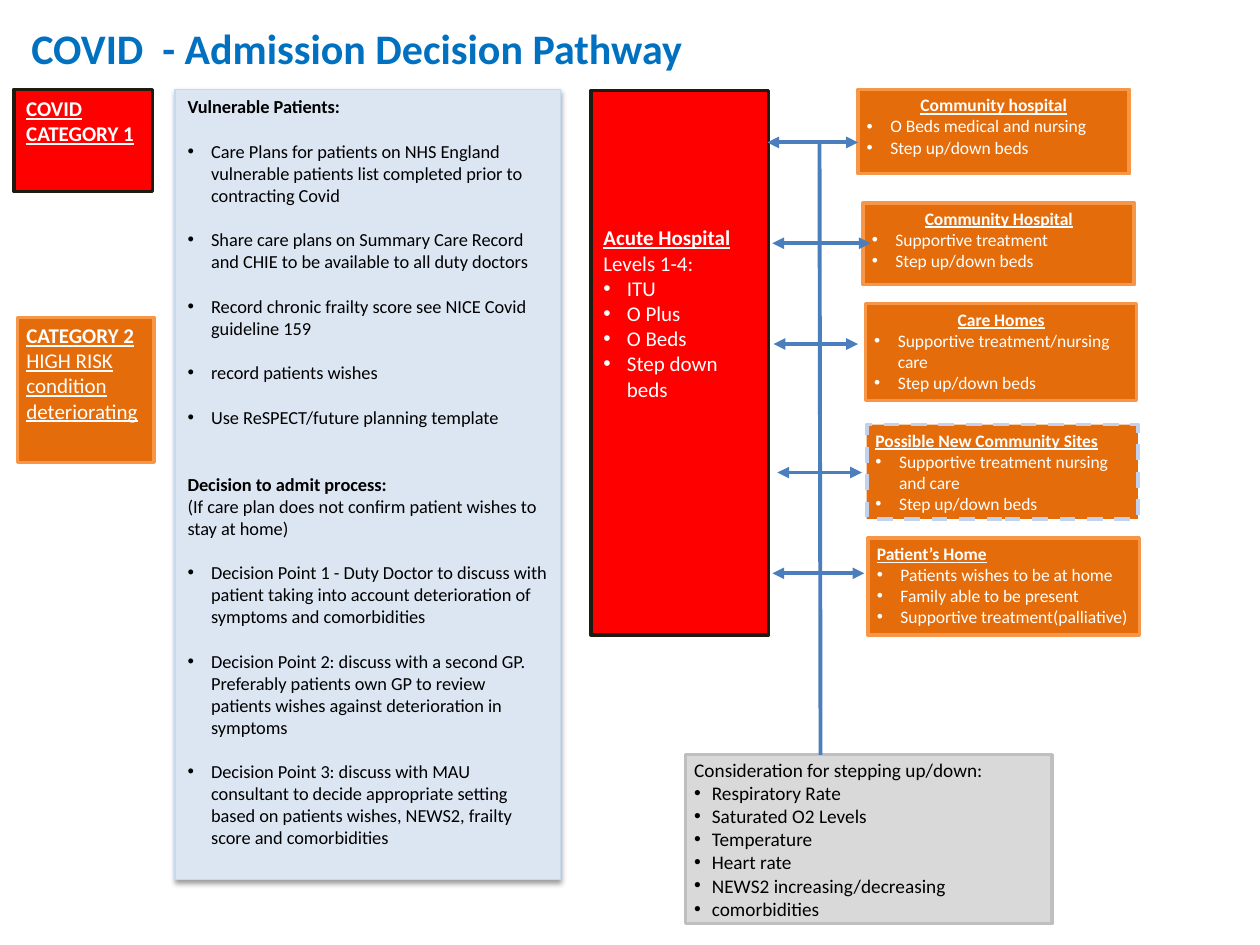
import dataclasses

import lxml.etree
import pptx
import pptx.dml.color
import pptx.enum.dml
import pptx.enum.shapes
import pptx.enum.text
import pptx.oxml
import pptx.oxml.ns
import pptx.util

Pt = pptx.util.Pt
qn = pptx.oxml.ns.qn
ALIGN = pptx.enum.text.PP_ALIGN
ANCHOR = pptx.enum.text.MSO_ANCHOR

FONT = "Calibri"
COLORS = {
    "title": "0070C0", "red": "FF0000", "dark": "1E1C11",
    "orange": "E46C0A", "orange_edge": "F79646", "dash_edge": "C2D1ED",
    "gray": "D9D9D9", "gray_edge": "BFBFBF",
    "blue": "DCE6F2", "blue_edge": "C6D9F1", "arrow": "4B7EBC",
    "white": "FFFFFF", "black": "000000",
}
NORMAL_INSETS = (7.2, 3.6)
TIGHT_INSETS = (5, 2.9)
GUIDANCE_GAP = 12.8  # one line of guidance text


@dataclasses.dataclass
class Line:
    """A paragraph made of (text, bold) runs."""
    runs: list
    underline: bool = False
    indent: float = 0
    align: object = ALIGN.LEFT
    before: float = 0


def heading(text, align=ALIGN.LEFT, before=0):
    return Line([(text, True)], underline=True, align=align, before=before)


def bullet(text, indent=13.5, before=0):
    return Line([(text, False)], indent=indent, before=before)


def rgb(name):
    return pptx.dml.color.RGBColor.from_string(COLORS[name])


def write_lines(frame, lines, size, color):
    for index, line in enumerate(lines):
        paragraph = frame.paragraphs[0] if index == 0 else frame.add_paragraph()
        if line.indent:
            properties = paragraph._p.get_or_add_pPr()
            properties.set("marL", str(Pt(line.indent)))
            properties.set("indent", str(-Pt(line.indent)))
            lxml.etree.SubElement(properties, qn("a:buFont")).set("typeface", "Arial")
            lxml.etree.SubElement(properties, qn("a:buChar")).set("char", "•")
        paragraph.alignment = line.align
        if line.before:
            paragraph.space_before = Pt(line.before)
        for text, bold in line.runs:
            run = paragraph.add_run()
            run.text = text
            run.font.name = FONT
            run.font.size = Pt(size)
            run.font.bold = bold
            run.font.underline = line.underline
            run.font.color.rgb = rgb(color)


def add_panel(slide, box, lines, size, fill, edge, color="white",
              insets=TIGHT_INSETS, edge_width=2, anchor=ANCHOR.TOP):
    shape = slide.shapes.add_shape(
        pptx.enum.shapes.MSO_SHAPE.RECTANGLE, *map(Pt, box))
    shape.shadow.inherit = False
    shape.fill.solid()
    shape.fill.fore_color.rgb = rgb(fill)
    shape.line.color.rgb = rgb(edge)
    shape.line.width = Pt(edge_width)
    frame = shape.text_frame
    frame.word_wrap = True
    frame.vertical_anchor = anchor
    frame.margin_left = frame.margin_right = Pt(insets[0])
    frame.margin_top = frame.margin_bottom = Pt(insets[1])
    write_lines(frame, lines, size, color)
    return shape


def add_shadow(shape):
    effects = shape._element.spPr.find(qn("a:effectLst"))
    effects.append(pptx.oxml.parse_xml(
        f'<a:outerShdw {pptx.oxml.ns.nsdecls("a")} blurRad="{Pt(3.1)}" '
        f'dist="{Pt(1.6)}" dir="5400000" rotWithShape="0">'
        f'<a:srgbClr val="{COLORS["black"]}"><a:alpha val="38000"/></a:srgbClr>'
        '</a:outerShdw>'))


def add_line(slide, start, end, arrow=True):
    connector = slide.shapes.add_connector(
        pptx.enum.shapes.MSO_CONNECTOR.STRAIGHT, *map(Pt, (*start, *end)))
    connector.line.color.rgb = rgb("arrow")
    connector.line.width = Pt(2.25)
    if arrow:
        outline = connector.line._get_or_add_ln()
        lxml.etree.SubElement(outline, qn("a:tailEnd")).set("type", "triangle")
    lxml.etree.SubElement(connector._element.spPr, qn("a:effectLst"))


def draw_title(slide, box):
    frame = slide.shapes.add_textbox(*map(Pt, box)).text_frame
    frame.word_wrap = False
    write_lines(frame, [Line([("COVID  - Admission Decision Pathway", True)])], 24, "title")


def draw_categories(slide, box):
    left, top, width, height = box
    add_panel(slide, (left, top, width - 0.8, 58.3), [heading("COVID CATEGORY 1")],
              12, "red", "dark", insets=NORMAL_INSETS)
    high_risk = Line([("CATEGORY 2 ", True),
                      ("HIGH RISK condition deteriorating", False)], underline=True)
    add_panel(slide, (left + 2.2, top + height - 82.8, width - 2.2, 82.8), [high_risk],
              12, "orange", "orange_edge")


def draw_guidance(slide, box):
    care_plans = [
        "Care Plans for patients on NHS England vulnerable patients list "
        "completed prior to contracting Covid",
        "Share care plans on Summary Care Record and CHIE to be available to all duty doctors",
        "Record chronic frailty score see NICE Covid guideline 159",
        "record patients wishes",
        "Use ReSPECT/future planning template",
    ]
    decisions = [
        "Decision Point 1 - Duty Doctor to discuss with patient taking into account "
        "deterioration of symptoms and comorbidities",
        "Decision Point 2: discuss with a second GP. Preferably patients own GP to review "
        "patients wishes against deterioration in symptoms",
        "Decision Point 3: discuss with MAU consultant to decide appropriate setting based "
        "on patients wishes, NEWS2, frailty score and comorbidities",
    ]
    lines = [
        Line([("Vulnerable Patients:", True)]),
        *(bullet(text, before=GUIDANCE_GAP) for text in care_plans),
        Line([("Decision to admit process:", True)], before=2 * GUIDANCE_GAP),
        Line([("(If care plan does not confirm patient wishes to stay at home)", False)]),
        *(bullet(text, before=GUIDANCE_GAP) for text in decisions),
    ]
    panel = add_panel(slide, box, lines, 10.5, "blue", "blue_edge", "black",
                      NORMAL_INSETS, edge_width=0.75)
    add_shadow(panel)


def draw_acute_hospital(slide, box):
    lines = [heading("Acute Hospital"), Line([("Levels 1-4:", False)]),
             *map(bullet, ("ITU", "O Plus", "O Beds", "Step down beds"))]
    panel = add_panel(slide, box, lines, 12, "red", "dark", insets=NORMAL_INSETS)
    panel.text_frame.margin_top = Pt(76.8)


def draw_care_settings(slide, box):
    left, top, width, _ = box
    beds = "Step up/down beds"
    # x offset, y offset, height, title, alignment, bullets
    settings = [
        (0, 0, 48.2, "Community hospital", ALIGN.CENTER,
         ["O Beds medical and nursing", beds]),
        (2.9, 64.8, 46.8, "Community Hospital", ALIGN.CENTER,
         ["Supportive treatment", beds]),
        (4.3, 122.4, 55.4, "Care Homes", ALIGN.CENTER,
         ["Supportive treatment/nursing care", beds]),
        (5, 191.5, 54, "Possible New Community Sites", ALIGN.LEFT,
         ["Supportive treatment nursing and care", beds]),
        (5.8, 256.3, 55.4, "Patient’s Home", ALIGN.LEFT,
         ["Patients wishes to be at home", "Family able to be present",
          "Supportive treatment(palliative)"]),
    ]
    for x, y, height, title, align, items in settings:
        card = add_panel(slide, (left + x, top + y, width, height),
                         [heading(title, align), *map(bullet, items)],
                         10, "orange", "orange_edge")
        if title.startswith("Possible"):
            card.line.color.rgb = rgb("dash_edge")
            card.line.width = Pt(2.25)
            card.line.dash_style = pptx.enum.dml.MSO_LINE.DASH


def draw_considerations(slide, box):
    items = ("Respiratory Rate", "Saturated O2 Levels", "Temperature", "Heart rate",
             "NEWS2 increasing/decreasing", "comorbidities")
    lines = [Line([("Consideration for stepping up/down:", False)]),
             *(bullet(text, indent=10.1) for text in items)]
    add_panel(slide, box, lines, 11, "gray", "gray_edge", "black", anchor=ANCHOR.MIDDLE)


def draw_transfers(slide, box):
    """Trunk line with arrows out to the hospital and to each care setting."""
    left, top, _, height = box
    trunk = left + 29.8
    add_line(slide, (trunk + 0.6, top + height), (trunk, top), arrow=False)
    # y offset, left tip, right tip
    for y, start, end in [(0, 0, 51.8), (57.6, 2.9, 59), (115.2, 3.6, 51.8),
                          (188.6, 5.8, 54), (246.2, 2.9, 55.4)]:
        for tip in (start, end):
            add_line(slide, (trunk, top + y), (left + tip, top + y))


def main():
    presentation = pptx.Presentation()
    presentation.slide_width, presentation.slide_height = Pt(720), Pt(540)
    slide = presentation.slides.add_slide(presentation.slide_layouts[6])
    draw_categories(slide, (7.9, 51.1, 80, 213.1))
    draw_acute_hospital(slide, (337.7, 51.8, 101.5, 311))
    draw_considerations(slide, (391.7, 431.3, 209.5, 96.5))
    draw_care_settings(slide, (490.3, 51.1, 155, 311.8))
    draw_transfers(slide, (438.5, 81.4, 59, 349.9))
    draw_guidance(slide, (100.1, 51.1, 220.3, 451.4))
    draw_title(slide, (10.8, 9.4, 390.2, 65.5))
    presentation.save("out.pptx")


if __name__ == "__main__":
    main()
